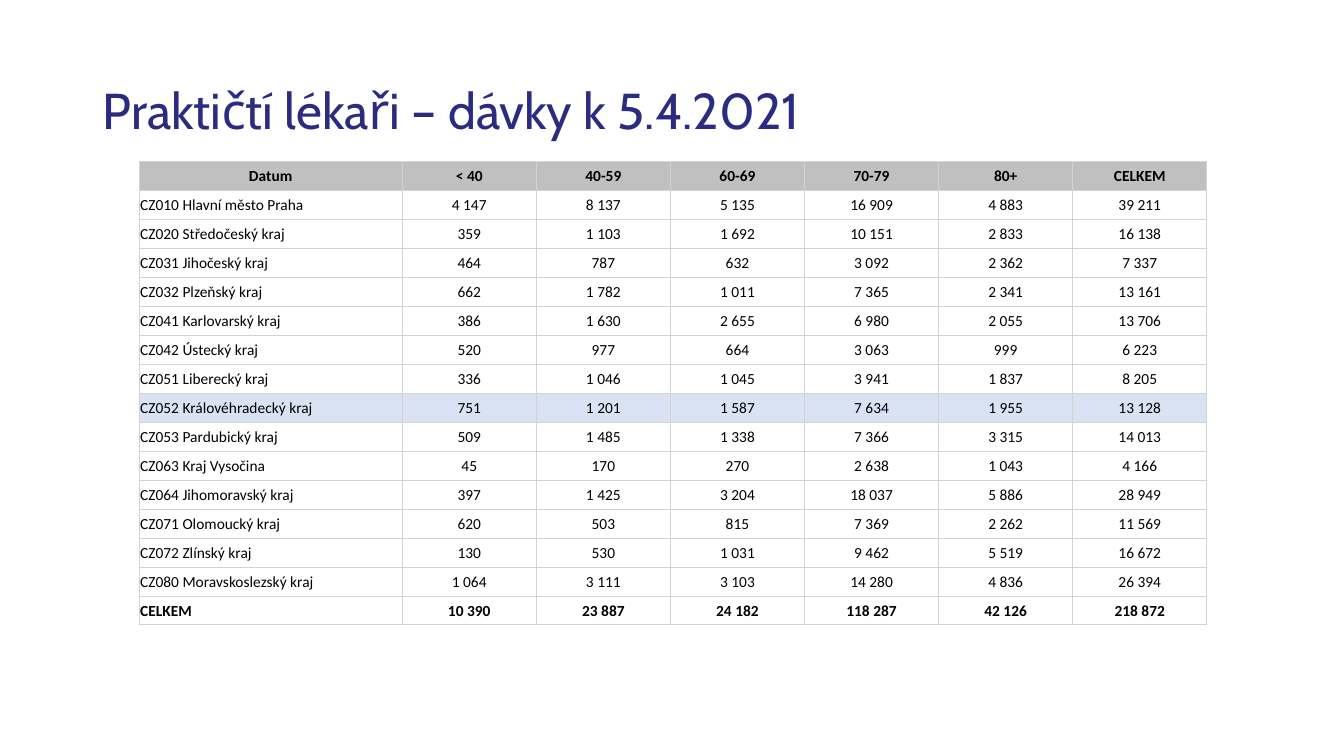
from dataclasses import dataclass

from lxml.etree import SubElement as Sub
from pptx import Presentation
from pptx.dml.color import RGBColor as Rgb
from pptx.enum.text import MSO_ANCHOR as Anchor, MSO_AUTO_SIZE as Fit, PP_ALIGN as Align
from pptx.oxml.ns import qn
from pptx.util import Inches, Pt


@dataclass(frozen=True)
class Theme:
    navy: str = "2B2B82"
    black: str = "000000"
    grey: str = "C0C0C0"
    blue: str = "DAE3F3"
    rule: str = "D3D3D3"
    head: str = "Cabin"
    body: str = "Calibri"
    big: int = 36
    small: int = 11
    thin: float = 0.5


HEADS = ["Datum", "< 40", "40-59", "60-69", "70-79", "80+", "CELKEM"]
DOSES = [
    ("CZ010 Hlavní město Praha", 4147, 8137, 5135, 16909, 4883, 39211),
    ("CZ020 Středočeský kraj", 359, 1103, 1692, 10151, 2833, 16138),
    ("CZ031 Jihočeský kraj", 464, 787, 632, 3092, 2362, 7337),
    ("CZ032 Plzeňský kraj", 662, 1782, 1011, 7365, 2341, 13161),
    ("CZ041 Karlovarský kraj", 386, 1630, 2655, 6980, 2055, 13706),
    ("CZ042 Ústecký kraj", 520, 977, 664, 3063, 999, 6223),
    ("CZ051 Liberecký kraj", 336, 1046, 1045, 3941, 1837, 8205),
    ("CZ052 Královéhradecký kraj", 751, 1201, 1587, 7634, 1955, 13128),
    ("CZ053 Pardubický kraj", 509, 1485, 1338, 7366, 3315, 14013),
    ("CZ063 Kraj Vysočina", 45, 170, 270, 2638, 1043, 4166),
    ("CZ064 Jihomoravský kraj", 397, 1425, 3204, 18037, 5886, 28949),
    ("CZ071 Olomoucký kraj", 620, 503, 815, 7369, 2262, 11569),
    ("CZ072 Zlínský kraj", 130, 530, 1031, 9462, 5519, 16672),
    ("CZ080 Moravskoslezský kraj", 1064, 3111, 3103, 14280, 4836, 26394),
    ("CELKEM", 10390, 23887, 24182, 118287, 42126, 218872),
]
MARKED = "CZ052 Královéhradecký kraj"


def label(value):
    """Group the thousands of a number with a space."""
    return value if isinstance(value, str) else f"{value:,}".replace(",", " ")


class Deck:
    def __init__(self, theme):
        self.theme = theme
        self.prs = Presentation()
        self.prs.slide_width, self.prs.slide_height = Inches(13.33), Inches(7.5)
        self.slide = self.prs.slides.add_slide(self.prs.slide_layouts[5])

    def text(self, para, words, font, size, color, bold=False):
        run = para.add_run()
        run.text = words
        run.font.name, run.font.size, run.font.bold = font, Pt(size), bold
        run.font.color.rgb = Rgb.from_string(color)

    def title(self, words, left, top, width, height):
        box = self.slide.shapes.title
        box.left, box.top = Inches(left), Inches(top)
        box.width, box.height = Inches(width), Inches(height)
        frame = box.text_frame
        frame.word_wrap, frame.auto_size = True, Fit.NONE
        frame.vertical_anchor = Anchor.MIDDLE
        para = frame.paragraphs[0]
        para.alignment, para.line_spacing = Align.LEFT, 0.9
        self.text(para, words, self.theme.head, self.theme.big, self.theme.navy)

    def border(self, cell):
        props = cell._tc.get_or_add_tcPr()
        for side in ("lnL", "lnR", "lnT", "lnB"):
            line = Sub(props, qn(f"a:{side}"), w=str(Pt(self.theme.thin)))
            fill = Sub(line, qn("a:solidFill"))
            Sub(fill, qn("a:srgbClr"), val=self.theme.rule)

    def cell(self, cell, words, align, bold, fill):
        self.border(cell)
        cell.margin_left = cell.margin_right = cell.margin_top = Inches(0.01)
        cell.margin_bottom = 0
        cell.vertical_anchor = Anchor.MIDDLE
        if fill:
            cell.fill.solid()
            cell.fill.fore_color.rgb = Rgb.from_string(fill)
        else:
            cell.fill.background()
        para = cell.text_frame.paragraphs[0]
        para.alignment = align
        self.text(para, words, self.theme.body, self.theme.small, self.theme.black, bold)

    def table(self, rows, left, top, widths, height):
        frame = self.slide.shapes.add_table(
            len(rows), len(widths), Inches(left), Inches(top),
            Inches(sum(widths)), Inches(height))
        table = frame.table
        table.first_row = table.horz_banding = False
        for col, width in zip(table.columns, widths):
            col.width = Inches(width)
        last = len(rows) - 1
        fills = {HEADS[0]: self.theme.grey, MARKED: self.theme.blue}
        for r, row in enumerate(rows):
            table.rows[r].height = Inches(height / len(rows))
            for c, value in enumerate(row):
                align = Align.LEFT if r and not c else Align.CENTER
                self.cell(table.cell(r, c), label(value), align,
                          r in (0, last), fills.get(row[0]))


def main():
    deck = Deck(Theme())
    # Heading
    deck.title("Praktičtí lékaři – dávky k 5.4.2021", 0.92, 0.4, 11.5, 1.45)
    # Doses by region and age group
    deck.table([HEADS, *DOSES], 1.38, 1.6, [2.61] + [1.33] * 6, 4.6)
    deck.prs.save("out.pptx")


if __name__ == "__main__":
    main()
